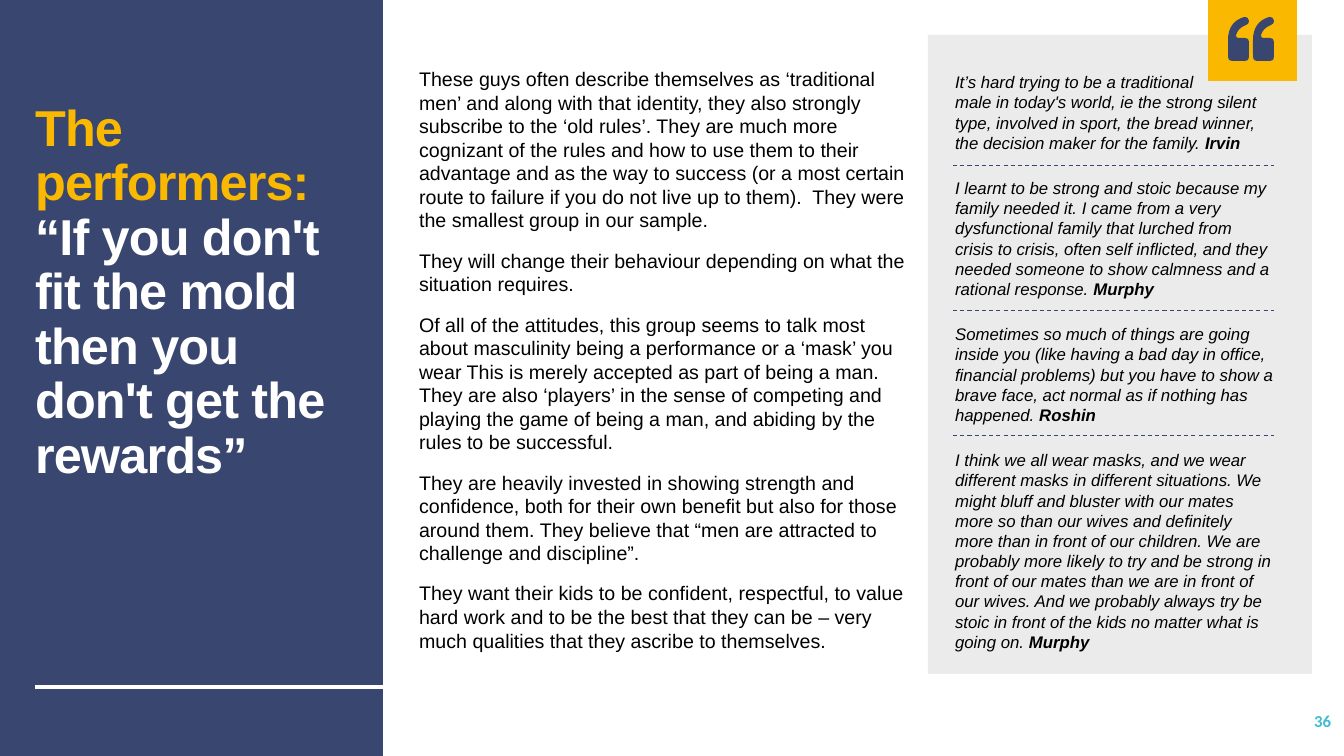
"""Build the slide on the performers: title panel, description and participant quotes."""
import pptx
import pptx.dml.color
import pptx.enum.dml
import pptx.enum.shapes
import pptx.enum.text
import pptx.oxml
import pptx.oxml.ns
import pptx.util

PX = 914400 / 100.8
RGB = pptx.dml.color.RGBColor.from_string
PT = pptx.util.Pt
ALIGN = pptx.enum.text.PP_ALIGN
ANCHOR = pptx.enum.text.MSO_ANCHOR
RECT = pptx.enum.shapes.MSO_SHAPE.RECTANGLE

THEME = {
    "navy": RGB("39466F"), "yellow": RGB("FAB900"), "grey": RGB("EBEBEB"),
    "white": RGB("FFFFFF"), "black": RGB("000000"), "cyan": RGB("40BAD2"),
    "font": "Arial", "number_font": "Calibri",
    "title": PT(36), "body": PT(14), "small": PT(12),
}

BODY = [
    "These guys often describe themselves as ‘traditional men’ and along with that identity, "
    "they also strongly subscribe to the ‘old rules’. They are much more cognizant of the rules "
    "and how to use them to their advantage and as the way to success (or a most certain route "
    "to failure if you do not live up to them).  They were the smallest group in our sample.",
    "They will change their behaviour depending on what the situation requires.",
    "Of all of the attitudes, this group seems to talk most about masculinity being a performance "
    "or a ‘mask’ you wear This is merely accepted as part of being a man. They are also ‘players’ "
    "in the sense of competing and playing the game of being a man, and abiding by the rules to "
    "be successful.",
    "They are heavily invested in showing strength and confidence, both for their own benefit but "
    "also for those around them. They believe that “men are attracted to challenge and discipline”.",
    "They want their kids to be confident, respectful, to value hard work and to be the best that "
    "they can be – very much qualities that they ascribe to themselves.",
]
QUOTES = [
    ("It’s hard trying to be a traditional\nmale in today's world, ie the strong silent type, "
     "involved in sport, the bread winner, the decision maker for the family. ", "Irvin"),
    ("I learnt to be strong and stoic because my family needed it. I came from a very "
     "dysfunctional family that lurched from crisis to crisis, often self inflicted, and they "
     "needed someone to show calmness and a rational response. ", "Murphy"),
    ("Sometimes so much of things are going inside you (like having a bad day in office, "
     "financial problems) but you have to show a brave face, act normal as if nothing has "
     "happened. ", "Roshin"),
    ("I think we all wear masks, and we wear different masks in different situations. We might "
     "bluff and bluster with our mates more so than our wives and definitely more than in front "
     "of our children. We are probably more likely to try and be strong in front of our mates "
     "than we are in front of our wives. And we probably always try be stoic in front of the "
     "kids no matter what is going on. ", "Murphy"),
]


def px(*values):
    """Turn pixel lengths into EMU."""
    return [round(v * PX) for v in values]


def write(sp, box, anchor, paragraphs, para, font):
    """Place a text shape and fill it with paragraphs of (text, font changes) runs."""
    sp.left, sp.top, sp.width, sp.height = px(*box)
    tf = sp.text_frame
    frame = {"word_wrap": True, "auto_size": pptx.enum.text.MSO_AUTO_SIZE.NONE,
             "vertical_anchor": anchor}
    for name, value in frame.items():
        setattr(tf, name, value)
    for i, runs in enumerate(paragraphs):
        p = tf.add_paragraph() if i else tf.paragraphs[0]
        for name, value in para.items():
            setattr(p, name, value)
        pPr = p._p.get_or_add_pPr()
        pPr.set("marL", "0")
        pPr.set("indent", "0")
        pPr.append(pptx.oxml.parse_xml(f"<a:buNone {pptx.oxml.ns.nsdecls('a')}/>"))
        for text, changes in runs:
            for n, line in enumerate(text.split("\n")):
                if n:
                    p.add_line_break()
                r = p.add_run()
                r.text = line
                style = {**font, **changes}
                r.font.color.rgb = style.pop("color")
                for name, value in style.items():
                    setattr(r.font, name, value)


prs = pptx.Presentation()
prs.slide_width, prs.slide_height = px(1344, 756)
s = prs.slides.add_slide(prs.slide_layouts[3])
title, body, quotes = s.placeholders

panels = [((928, 35, 384, 639), "grey"), ((0, 0, 383, 756), "navy"), ((1208, 0, 89, 81), "yellow")]
for box, color in panels:
    sp = s.shapes.add_shape(RECT, *px(*box))
    sp.shadow.inherit = False
    sp.fill.solid()
    sp.fill.fore_color.rgb = THEME[color]
    sp.line.fill.background()
    if color != "yellow":
        title.element.addprevious(sp.element)

write(title, (25, 40, 334, 507), ANCHOR.MIDDLE,
      [[("The performers: ", {"color": THEME["yellow"]}),
        ("“If you don't fit the mold then you don't get the rewards”", {})]],
      {"alignment": ALIGN.LEFT, "line_spacing": 0.9},
      {"name": THEME["font"], "size": THEME["title"], "bold": True, "color": THEME["white"]})
for r in title.text_frame.paragraphs[0].runs:
    r.font._element.set("spc", "-60")

spacing = {"alignment": ALIGN.LEFT, "line_spacing": 1.0, "space_before": PT(0)}
write(body, (409, 95, 519, 529), ANCHOR.MIDDLE, [[(text, {})] for text in BODY],
      {**spacing, "space_after": PT(12)},
      {"name": THEME["font"], "size": THEME["body"], "color": THEME["black"]})
write(quotes, (945, 67, 339, 595), ANCHOR.TOP,
      [[(text, {}), (speaker, {"bold": True})] for text, speaker in QUOTES],
      {**spacing, "space_after": PT(18)},
      {"name": THEME["font"], "size": THEME["small"], "italic": True, "color": THEME["black"]})
write(s.shapes.add_textbox(0, 0, 0, 0), (1172, 701, 169, 40), ANCHOR.MIDDLE, [[("36", {})]],
      {"alignment": ALIGN.RIGHT},
      {"name": THEME["number_font"], "size": THEME["small"], "bold": True, "color": THEME["cyan"]})

rules = [(35, 383, 687, "white", 3, None)]
rules += [(953, 1274, y, "navy", 0.75, pptx.enum.dml.MSO_LINE.DASH) for y in (166, 311, 436)]
for x1, x2, y, color, width, dash in rules:
    rule = s.shapes.add_connector(pptx.enum.shapes.MSO_CONNECTOR.STRAIGHT, *px(x1, y, x2, y))
    rule.line.color.rgb = THEME[color]
    rule.line.width = PT(width)
    rule.line.dash_style = dash
    rule._element.spPr.append(pptx.oxml.parse_xml(f"<a:effectLst {pptx.oxml.ns.nsdecls('a')}/>"))

CURVES = [((0, 40), (0, 40)), ((0, 44), (4, 44)), ((17, 44), (17, 44)), ((21, 44), (21, 40)),
          ((21, 25), (21, 25)), ((21, 21), (17, 21)), ((10, 21), (10, 21)), ((8, 21), (8, 18)),
          ((10, 11), (18, 8)), ((21, 7), (21, 4)), ((21, 0), (16, 0)), ((0, 5), (0, 23))]
mark = s.shapes.build_freeform(*px(1228, 40), scale=1.0)
for left in (1228, 1253):
    if left > 1228:
        mark.move_to(*px(left, 40))
    mark.add_line_segments([px(left + x, 17 + y) for curve in CURVES for x, y in curve], close=True)
sp = mark.convert_to_shape()
lines = list(sp._element.iter(pptx.oxml.ns.qn("a:lnTo")))
for control, end in zip(lines[::2], lines[1::2]):
    control.append(end[0])
    control.tag = pptx.oxml.ns.qn("a:quadBezTo")
    end.getparent().remove(end)
sp.shadow.inherit = False
sp.fill.solid()
sp.fill.fore_color.rgb = THEME["navy"]
sp.line.fill.background()

prs.save("out.pptx")
